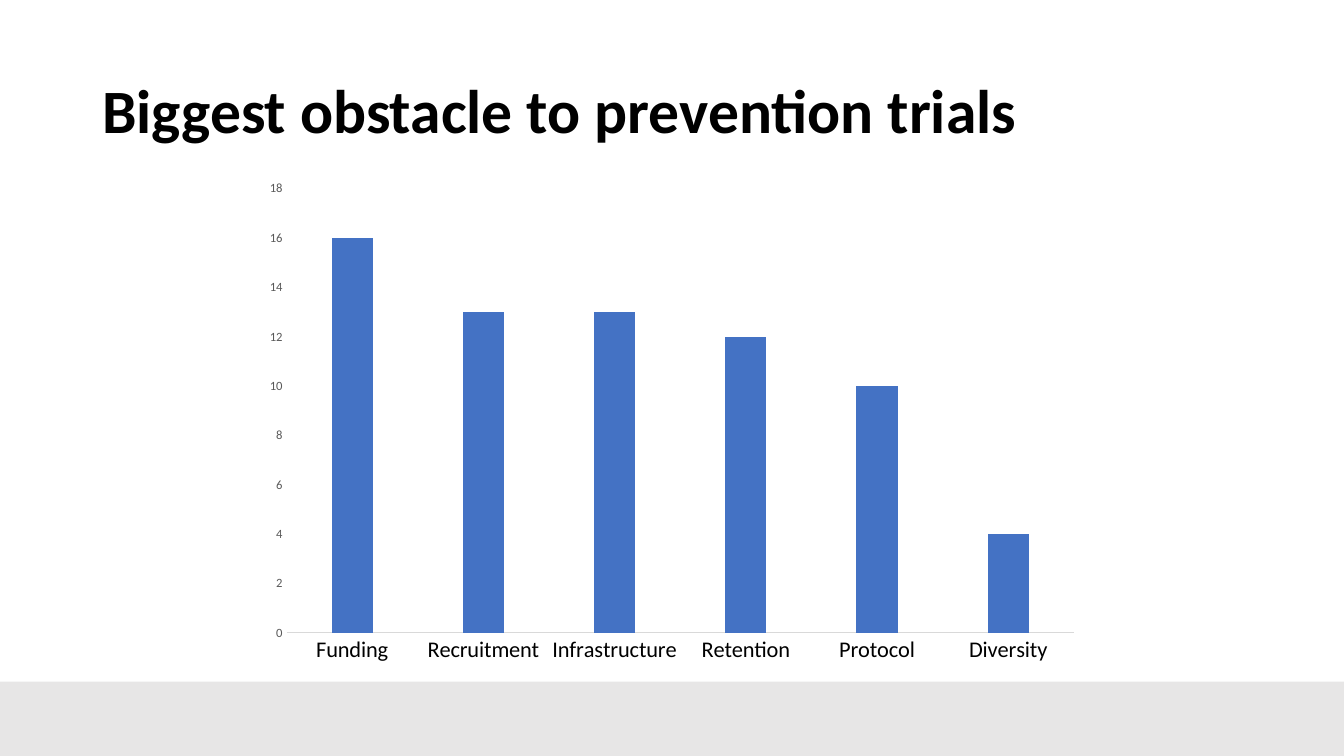
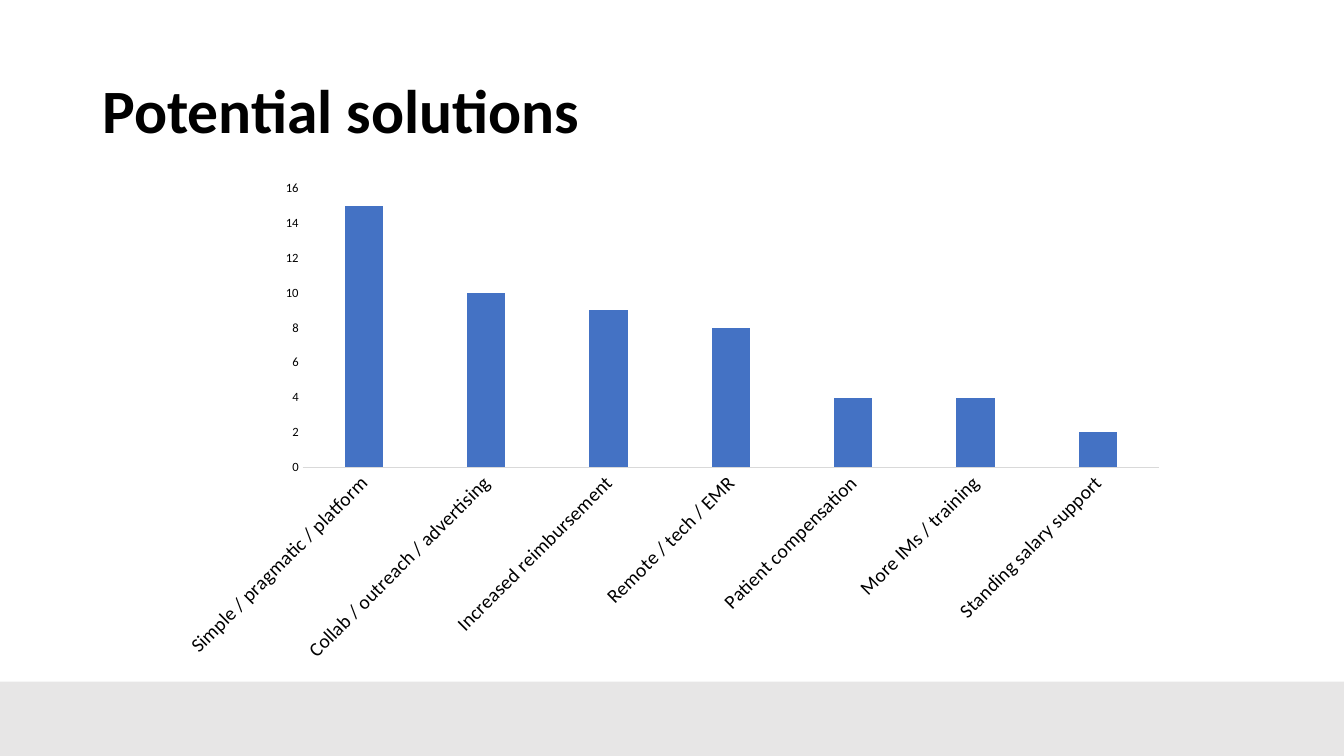
from pptx import Presentation
from pptx.chart.data import CategoryChartData
from pptx.dml.color import RGBColor
from pptx.enum.chart import XL_CHART_TYPE, XL_TICK_MARK
from pptx.enum.shapes import MSO_SHAPE
from pptx.enum.text import MSO_ANCHOR
from pptx.util import Pt

FONT = "Calibri"
COLORS = {"text": "000000", "muted": "595959", "band": "E7E6E6",
          "axis": "D9D9D9", "bar": "4472C4"}
WIDTH, HEIGHT = 960, 540
BAND_HEIGHT = 53
TITLE_BOX = (66, 28.75, 828, 104.4)
AUTO_ANGLE = -1000

SLIDES = [
    {"title": "Biggest obstacle to prevention trials",
     "box": (180.75, 122.4, 598.3, 359.3),
     "data": {"Funding": 16, "Recruitment": 13, "Infrastructure": 13,
              "Retention": 12, "Protocol": 10, "Diversity": 4},
     "top": 18, "label_size": 16, "value_color": "muted", "angle": AUTO_ANGLE},
    {"title": "Potential solutions",
     "box": (118, 122.4, 724.3, 357.8),
     "data": {"Simple / pragmatic / platform": 15,
              "Collab / outreach / advertising": 10,
              "Increased reimbursement": 9, "Remote / tech / EMR": 8,
              "Patient compensation": 4, "More IMs / training": 4,
              "Standing salary support": 2},
     "top": 16, "label_size": 14, "value_color": "text", "angle": -45},
]


def rgb(name):
    """Return the named colour."""
    return RGBColor.from_string(COLORS[name])


def style_font(font, size, color="text", bold=False):
    """Set the typeface, size, colour and weight of a font."""
    font.name, font.size, font.bold = FONT, Pt(size), bold
    font.color.rgb = rgb(color)


def add_band(s, x, y, w, h):
    """Fill the footer box with a plain band."""
    sp = s.shapes.add_shape(MSO_SHAPE.RECTANGLE, Pt(x), Pt(y), Pt(w), Pt(h))
    sp.shadow.inherit = False
    sp.fill.solid()
    sp.fill.fore_color.rgb = rgb("band")
    sp.line.fill.background()


def add_title(s, text, x, y, w, h):
    """Place the slide title, centred vertically in its box."""
    tf = s.shapes.add_textbox(Pt(x), Pt(y), Pt(w), Pt(h)).text_frame
    tf.word_wrap = True
    tf.vertical_anchor = MSO_ANCHOR.MIDDLE
    p = tf.paragraphs[0]
    p.text = text
    p.line_spacing = 0.9
    style_font(p.runs[0].font, 44, bold=True)


def style_axis(axis, size, color):
    """Give an axis its label font and drop ticks and gridlines."""
    axis.has_major_gridlines = False
    axis.major_tick_mark = axis.minor_tick_mark = XL_TICK_MARK.NONE
    style_font(axis.tick_labels.font, size, color)


def add_bar_chart(s, item, x, y, w, h):
    """Place a single-series column chart in its box."""
    data = CategoryChartData()
    data.categories = list(item["data"])
    data.add_series("Series 1", list(item["data"].values()))
    chart = s.shapes.add_chart(XL_CHART_TYPE.COLUMN_CLUSTERED,
                               Pt(x), Pt(y), Pt(w), Pt(h), data).chart
    chart.has_legend = chart.has_title = False
    style_font(chart.font, 10)

    plot = chart.plots[0]
    plot.vary_by_categories = False
    plot.gap_width, plot.overlap = 219, -27
    fill = plot.series[0].format.fill
    fill.solid()
    fill.fore_color.rgb = rgb("bar")

    cats, vals = chart.category_axis, chart.value_axis
    style_axis(cats, item["label_size"], "text")
    cats.format.line.color.rgb = rgb("axis")
    cats.format.line.width = Pt(0.75)
    body = cats._element.txPr.bodyPr
    body.set("rot", str(item["angle"] * 60000))
    body.set("vert", "horz")

    style_axis(vals, 9, item["value_color"])
    vals.format.line.fill.background()
    vals.minimum_scale, vals.maximum_scale, vals.major_unit = 0, item["top"], 2


def add_chart_slide(prs, item):
    """Add one slide with band, title and chart."""
    s = prs.slides.add_slide(prs.slide_layouts[6])
    add_band(s, 0, HEIGHT - BAND_HEIGHT, WIDTH, BAND_HEIGHT)
    add_title(s, item["title"], *TITLE_BOX)
    add_bar_chart(s, item, *item["box"])


def main():
    """Build and save the presentation."""
    prs = Presentation()
    prs.slide_width, prs.slide_height = Pt(WIDTH), Pt(HEIGHT)
    for item in SLIDES:
        add_chart_slide(prs, item)
    prs.save("out.pptx")


if __name__ == "__main__":
    main()
